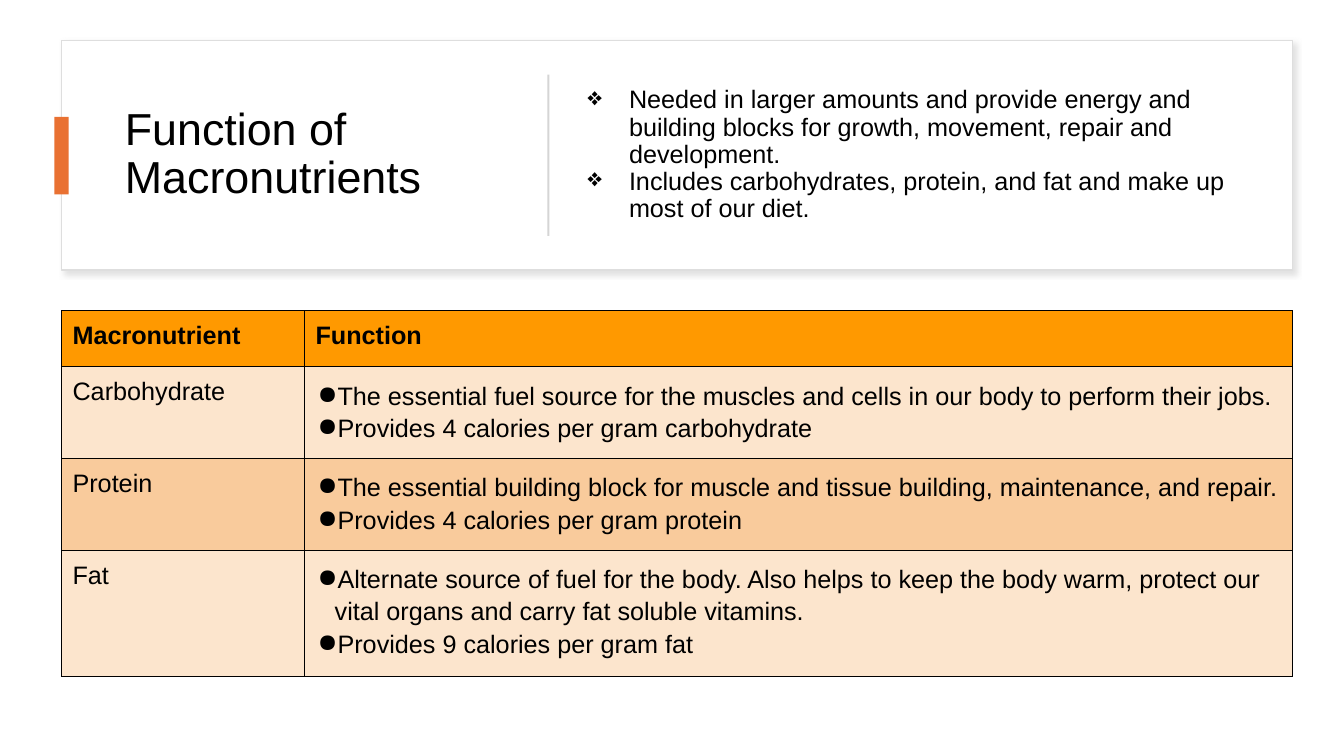
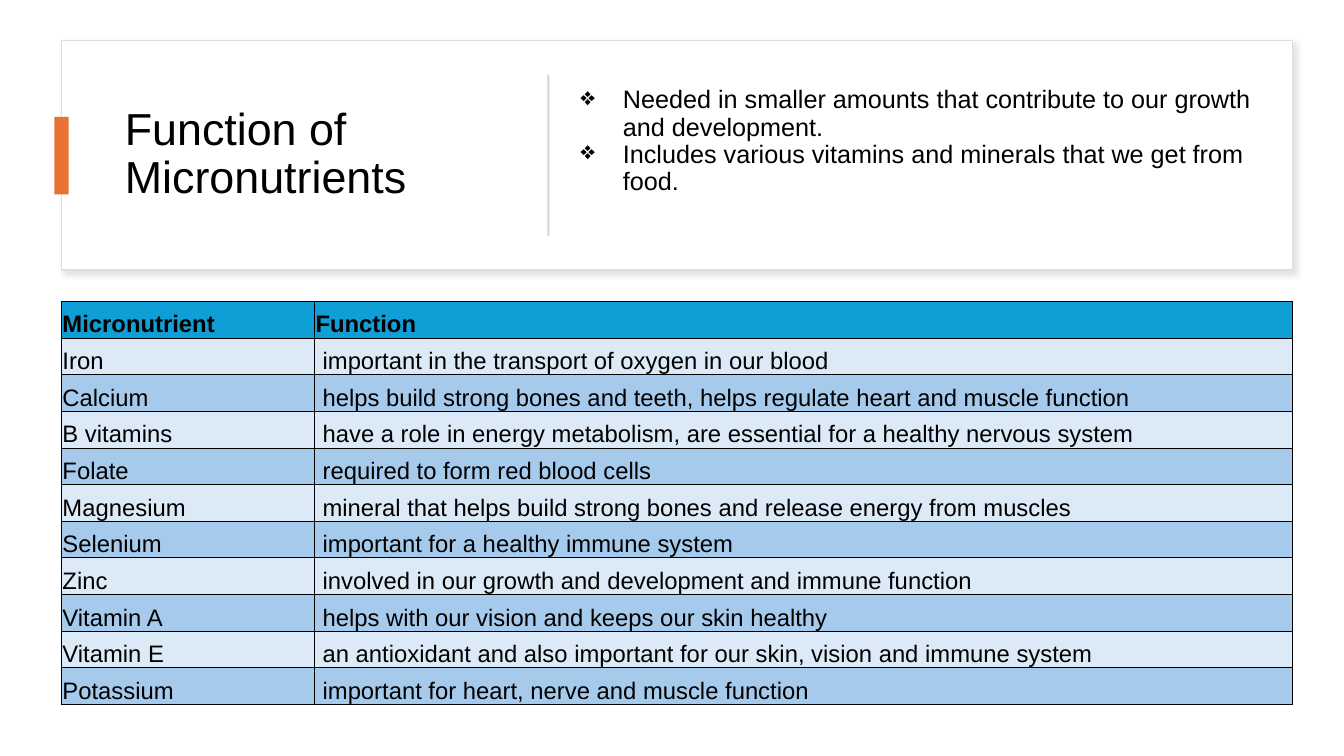
from lxml.etree import SubElement
from pptx import Presentation
from pptx.dml.color import RGBColor
from pptx.enum.shapes import MSO_SHAPE
from pptx.enum.text import MSO_ANCHOR as ANCHOR
from pptx.oxml.ns import qn
from pptx.util import Inches, Pt

# Shared style
FONT = "Arial"
BLACK = RGBColor(0x00, 0x00, 0x00)
WHITE = RGBColor(0xFF, 0xFF, 0xFF)
CARD_LINE = RGBColor(0xDE, 0xDE, 0xDE)
CARD_SHADOW = RGBColor(0xC5, 0xC5, 0xC5)
DIVIDER = RGBColor(0xD5, 0xD5, 0xD5)
ACCENT = RGBColor(0xE9, 0x71, 0x32)

# Table colours: header, then the two alternating row fills
ORANGES = (RGBColor(0xFF, 0x99, 0x00), RGBColor(0xFC, 0xE5, 0xCD),
           RGBColor(0xF9, 0xCB, 0x9C))
BLUES = (RGBColor(0x0F, 0x9E, 0xD5), RGBColor(0xDC, 0xEA, 0xF7),
         RGBColor(0xA6, 0xCA, 0xEC))

LEFT, WIDTH = 0.61, 12.21

MACRO_POINTS = [
    "Needed in larger amounts and provide energy and building blocks for "
    "growth, movement, repair and development.",
    "Includes carbohydrates, protein, and fat and make up most of our diet.",
]
MACRO_ROWS = [
    ("Macronutrient", "Function"),
    ("Carbohydrate", [
        "The essential fuel source for the muscles and cells in our body to "
        "perform their jobs.",
        "Provides 4 calories per gram carbohydrate"]),
    ("Protein", [
        "The essential building block for muscle and tissue building, "
        "maintenance, and repair.",
        "Provides 4 calories per gram protein"]),
    ("Fat", [
        "Alternate source of fuel for the body. Also helps to keep the body "
        "warm, protect our vital organs and carry fat soluble vitamins.",
        "Provides 9 calories per gram fat"]),
]

MICRO_POINTS = [
    "Needed in smaller amounts that contribute to our growth and development.",
    "Includes various vitamins and minerals that we get from food.",
]
MICRO_ROWS = [
    ("Micronutrient", "Function"),
    ("Iron", "important in the transport of oxygen in our blood"),
    ("Calcium", "helps build strong bones and teeth, helps regulate heart "
                "and muscle function"),
    ("B vitamins", "have a role in energy metabolism, are essential for a "
                   "healthy nervous system"),
    ("Folate", "required to form red blood cells"),
    ("Magnesium", "mineral that helps build strong bones and release energy "
                  "from muscles"),
    ("Selenium", "important for a healthy immune system"),
    ("Zinc", "involved in our growth and development and immune function"),
    ("Vitamin A", "helps with our vision and keeps our skin healthy"),
    ("Vitamin E", "an antioxidant and also important for our skin, vision "
                  "and immune system"),
    ("Potassium", "important for heart, nerve and muscle function"),
]


def write(tf, text, size=18, bold=False, spacing=None, bullet=None,
          indent=(0, 0)):
    """Fill a text frame with one paragraph, or one per item of a list."""
    items = [text] if isinstance(text, str) else text
    for i, item in enumerate(items):
        p = tf.paragraphs[0] if i == 0 else tf.add_paragraph()
        if bullet:
            pPr = p._p.get_or_add_pPr()
            pPr.set("marL", str(Inches(indent[0])))
            pPr.set("indent", str(Inches(indent[1])))
            SubElement(pPr, qn("a:buChar")).set("char", bullet)
        if spacing:
            p.line_spacing = spacing
        r = p.add_run()
        r.text = item
        r.font.name = FONT
        r.font.size = Pt(size)
        r.font.bold = bold
        r.font.color.rgb = BLACK


def add_text(s, x, y, w, h, text, **fmt):
    tf = s.shapes.add_textbox(Inches(x), Inches(y), Inches(w),
                              Inches(h)).text_frame
    tf.word_wrap = True
    tf.vertical_anchor = ANCHOR.MIDDLE
    write(tf, text, **fmt)


def add_rect(s, x, y, w, h, fill, line=None):
    sp = s.shapes.add_shape(MSO_SHAPE.RECTANGLE, Inches(x), Inches(y),
                            Inches(w), Inches(h))
    sp.shadow.inherit = False
    sp.fill.solid()
    sp.fill.fore_color.rgb = fill
    if line is None:
        sp.line.fill.background()
    else:
        sp.line.color.rgb = line
        sp.line.width = Pt(1)
    return sp


def add_soft_shadow(sp):
    effects = sp._element.spPr.find(qn("a:effectLst"))
    shadow = SubElement(effects, qn("a:outerShdw"), blurRad=str(Pt(4)),
                        dist=str(Pt(3)), dir=str(45 * 60000), algn="tl",
                        rotWithShape="0")
    color = SubElement(shadow, qn("a:srgbClr"), val=str(CARD_SHADOW))
    SubElement(color, qn("a:alpha"), val="50000")


def add_header(s, title, points, points_x, points_w, points_h, hanging):
    """Card with accent bar, title, divider and bulleted summary."""
    add_soft_shadow(add_rect(s, LEFT, 0.4, WIDTH, 2.28, WHITE, CARD_LINE))
    add_text(s, 1.14, 0.64, 3.89, 1.8, title, size=32, spacing=0.9)
    add_rect(s, 0.54, 1.16, 0.14, 0.77, ACCENT)
    add_rect(s, 5.43, 0.74, 0.02, 1.6, DIVIDER)
    add_text(s, points_x, 0.64, points_w, points_h, points, spacing=0.9,
             bullet="❖", indent=(0.5, -hanging))


def set_borders(cell, width):
    tcPr = cell._tc.get_or_add_tcPr()
    for side in ("lnL", "lnR", "lnT", "lnB"):
        ln = SubElement(tcPr, qn(f"a:{side}"), w=str(Pt(width)))
        fill = SubElement(ln, qn("a:solidFill"))
        SubElement(fill, qn("a:srgbClr"), val=str(BLACK))


def add_table(s, top, cols, heights, rows, colors, size, border, margins,
              anchor=ANCHOR.TOP, text_inset=0):
    """Table with a header row; list cells become bulleted paragraphs."""
    table = s.shapes.add_table(len(rows), len(cols), Inches(LEFT), Inches(top),
                               Inches(WIDTH), Inches(sum(heights))).table
    table.horz_banding = False
    for col, w in zip(table.columns, cols):
        col.width = Inches(w)
    header, *bands = colors
    for i, (row, height, texts) in enumerate(zip(table.rows, heights, rows)):
        row.height = Inches(height)
        for j, (cell, text) in enumerate(zip(row.cells, texts)):
            set_borders(cell, border)
            cell.fill.solid()
            cell.fill.fore_color.rgb = bands[(i - 1) % 2] if i else header
            cell.vertical_anchor = anchor
            left, up, right, down = map(Inches, margins)
            cell.margin_left = left + Inches(text_inset if i and j else 0)
            cell.margin_top, cell.margin_right = up, right
            cell.margin_bottom = down
            fmt = {}
            if isinstance(text, list):
                fmt = dict(spacing=1.15, bullet="●", indent=(0.19, -0.17))
            write(cell.text_frame, text, size=size, bold=i == 0, **fmt)


def main():
    prs = Presentation()
    prs.slide_width, prs.slide_height = Inches(13.33), Inches(7.5)
    blank = prs.slide_layouts[6]

    # Macronutrients
    s = prs.slides.add_slide(blank)
    add_header(s, "Function of Macronutrients", MACRO_POINTS,
               5.64, 7.02, 1.8, hanging=0.41)
    add_table(s, 3.08, (2.41, 9.8), (0.56, 0.91, 0.91, 1.25), MACRO_ROWS,
              ORANGES, size=18, border=0.75, margins=(0.11,) * 4)

    # Micronutrients
    s = prs.slides.add_slide(blank)
    add_header(s, "Function of Micronutrients", MICRO_POINTS,
               5.58, 7.13, 1.53, hanging=0.42)
    add_table(s, 2.99, (2.51, 9.7), [4 / len(MICRO_ROWS)] * len(MICRO_ROWS),
              MICRO_ROWS, BLUES, size=17, border=0.5,
              margins=(0.01, 0.01, 0.01, 0), anchor=ANCHOR.BOTTOM,
              text_inset=0.07)

    prs.save("out.pptx")


if __name__ == "__main__":
    main()
